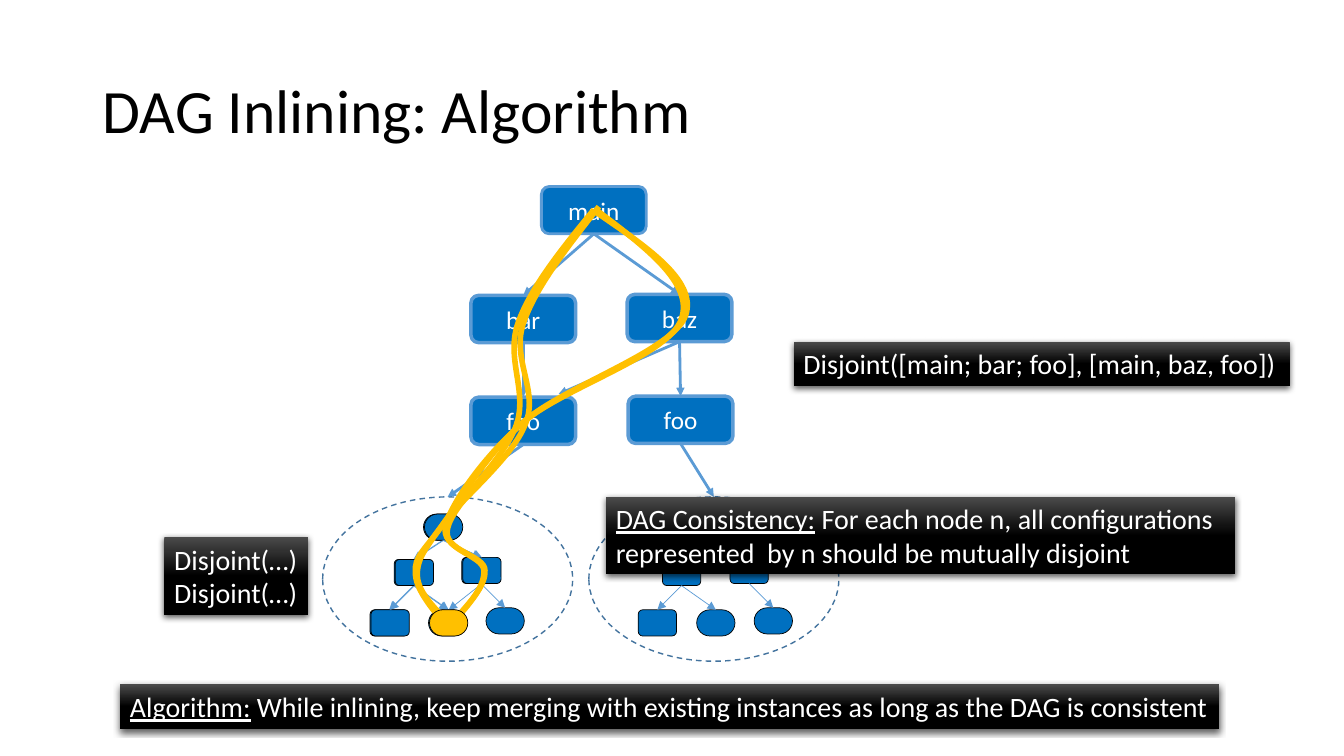
from lxml import etree
from pptx import Presentation
from pptx import util as u
from pptx.dml.color import RGBColor
from pptx.enum import dml, shapes, text
from pptx.oxml import ns

COLORS = {"blue": "0070C0", "edge": "5B9BD5", "region": "43739E", "gold": "FFC000",
          "black": "000000", "gray": "4B4B4B", "white": "FFFFFF"}
KINDS = shapes.MSO_SHAPE
TOP, BOTTOM = 0, 2  # connection sites of a call

CALLS = {  # label, left, top, outline width
    "main": ("main", 5.37, 1.85, 2),
    "bar": ("bar", 4.67, 2.93, 2.5),
    "baz": ("baz", 6.22, 2.92, 2.5),
    "shared foo": ("foo", 4.67, 3.94, 2.5),
    "other foo": ("foo", 6.23, 3.93, 2.5),
}
CALL_SIZE = (1.04, 0.47)
CALL_EDGES = [("main", "bar"), ("main", "baz"), ("bar", "shared foo"),
              ("baz", "other foo"), ("shared foo", "shared body"),
              ("other foo", "other body")]
BODIES = {"shared body": 3.2, "other body": 5.84}

BLOCK_SIZE = (0.38, 0.26)
BLOCKS = {  # offset within a body, rounded ends
    "left": (0.24, 0.45, False),
    "right": (0.91, 0.43, False),
    "root": (0.53, 0, True),
    "join": (0.58, 0.95, True),
    "left leaf": (0, 0.95, False),
    "right leaf": (1.15, 0.93, True),
}
BLOCK_EDGES = [("root", "left"), ("left", "left leaf"), ("left", "join"), ("root", "right")]
BLOCKS_TOP = 5.1
BODY_BLOCKS = [  # left, blocks left out, edge that differs
    (3.67, (), ("right", "right leaf")),
    (3.68, ("join", "right leaf"), ("right", "join")),
    (6.33, (), ("right", "right leaf")),
]

CONFIGURATIONS = [  # start, then two controls and an end for each curve
    [(5.94, 2.05), (5.63, 2.45), (5.31, 2.85), (5.19, 3.21), (5.07, 3.57), (5.35, 3.88),
     (5.21, 4.21), (5.08, 4.55), (4.55, 4.97), (4.38, 5.22), (4.2, 5.47), (4.13, 5.56),
     (4.14, 5.72), (4.15, 5.88), (4.31, 6.03), (4.46, 6.19)],
    [(5.89, 2.08), (5.58, 2.46), (5.27, 2.84), (5.14, 3.2), (5.01, 3.56), (5.24, 3.88),
     (5.12, 4.22), (5, 4.56), (4.49, 5), (4.44, 5.24), (4.38, 5.47), (4.81, 5.5),
     (4.81, 5.66), (4.82, 5.82), (4.64, 6), (4.47, 6.19)],
    [(5.89, 2.09), (6.4, 2.44), (6.92, 2.78), (6.8, 3.13), (6.68, 3.48), (5.6, 3.83),
     (5.2, 4.18), (4.8, 4.53), (4.56, 4.97), (4.38, 5.22), (4.2, 5.47), (4.11, 5.52),
     (4.12, 5.68), (4.12, 5.84), (4.27, 6.02), (4.41, 6.19)],
    [(5.91, 2.08), (6.4, 2.45), (6.88, 2.81), (6.76, 3.16), (6.65, 3.52), (5.58, 3.85),
     (5.19, 4.19), (4.8, 4.53), (4.49, 4.97), (4.42, 5.21), (4.36, 5.46), (4.79, 5.5),
     (4.8, 5.66), (4.81, 5.82), (4.65, 6), (4.48, 6.19)],
]


def add_xml(parent, tag, **attributes):
    return etree.SubElement(parent, ns.qn(tag), attributes)


class DagSlide:
    font = "Calibri"

    def __init__(self, deck):
        self.canvas = deck.slides.add_slide(deck.slide_layouts[5]).shapes

    def style(self, target, color, **values):
        target.color.rgb = RGBColor.from_string(COLORS[color])
        for name, value in values.items():
            setattr(target, name, value)

    def add_words(self, paragraph, words, color, size, **values):
        run = paragraph.add_run()
        run.text = words
        self.style(run.font, color, name=self.font, size=u.Pt(size), **values)

    def title(self, words):
        title = self.canvas.title
        box = {"left": 0.92, "top": 0.4, "width": 11.5, "height": 1.45}
        for side, length in box.items():
            setattr(title, side, u.Inches(length))
        title.text_frame.vertical_anchor = text.MSO_ANCHOR.MIDDLE
        title.text_frame.auto_size = text.MSO_AUTO_SIZE.NONE
        paragraph = title.text_frame.paragraphs[0]
        paragraph.alignment = text.PP_ALIGN.LEFT
        paragraph.line_spacing = 0.9
        self.add_words(paragraph, words, "black", 44)

    def node(self, kind, box, line, width, fill=None, label=None, canvas=None):
        node = (canvas or self.canvas).add_shape(kind, *map(u.Inches, box))
        node.shadow.inherit = False
        if fill:
            node.fill.solid()
            node.fill.fore_color.rgb = RGBColor.from_string(COLORS[fill])
        else:
            node.fill.background()
        self.style(node.line, line, width=u.Pt(width))
        if label:
            node.text_frame.vertical_anchor = text.MSO_ANCHOR.MIDDLE
            paragraph = node.text_frame.paragraphs[0]
            paragraph.alignment = text.PP_ALIGN.CENTER
            self.add_words(paragraph, label, "white", 18)
        return node

    def block(self, left, top, rounded, fill="blue", canvas=None):
        block = self.node(KINDS.ROUNDED_RECTANGLE, (left, top, *BLOCK_SIZE),
                          "black", 0.5, fill, canvas=canvas)
        if rounded:
            block.adjustments[0] = 0.5

    def arrow(self, start, end, width, canvas=None):
        arrow = (canvas or self.canvas).add_connector(
            shapes.MSO_CONNECTOR.STRAIGHT, *map(u.Inches, (*start, *end)))
        self.style(arrow.line, "edge", width=u.Pt(width))
        add_xml(arrow.line._get_or_add_ln(), "a:tailEnd", type="triangle")
        add_xml(arrow._element.spPr, "a:effectLst")
        return arrow

    def link(self, caller, callee):
        arrow = self.arrow((0, 0), (1, 1), 2)
        arrow.begin_connect(caller, BOTTOM)
        arrow.end_connect(callee, TOP)

    def body_blocks(self, left, omitted, last_edge):
        group = self.canvas.add_group_shape().shapes
        for name, (dx, dy, rounded) in BLOCKS.items():
            if name not in omitted:
                self.block(left + dx, BLOCKS_TOP + dy, rounded, canvas=group)
        width, height = BLOCK_SIZE
        for tail, head in [*BLOCK_EDGES, last_edge]:
            (x1, y1, _), (x2, y2, _) = BLOCKS[tail], BLOCKS[head]
            self.arrow((left + x1 + width / 2, BLOCKS_TOP + y1 + height),
                       (left + x2 + width / 2, BLOCKS_TOP + y2), 0.5, group)

    def configuration(self, points):
        """Draw a smooth call route through Bézier points."""
        start, *rest = [tuple(map(u.Inches, point)) for point in points]
        builder = self.canvas.build_freeform(*start)
        builder.add_line_segments(rest, close=False)
        route = builder.convert_to_shape()
        route.shadow.inherit = False
        route.fill.background()
        self.style(route.line, "gold", width=u.Pt(4))
        lines = list(route._element.iter(ns.qn("a:lnTo")))
        for segments in zip(lines[::3], lines[1::3], lines[2::3]):
            curve = etree.Element(ns.qn("a:cubicBezTo"))
            segments[0].addprevious(curve)
            for segment in segments:
                curve.append(segment[0])
                segment.getparent().remove(segment)

    def callout(self, box, *lines, heading=None):
        callout = self.canvas.add_textbox(*map(u.Inches, box))
        callout.fill.gradient()
        callout.fill.gradient_angle = 270
        for stop, color, position in zip(callout.fill.gradient_stops, ("gray", "black"), (0, 0.5)):
            self.style(stop, color, position=position)
        effects = add_xml(callout._element.spPr, "a:effectLst")
        shadow = add_xml(effects, "a:outerShdw", blurRad=str(int(u.Pt(4.5))),
                         dist=str(int(u.Pt(1.5))), dir="5400000", algn="ctr", rotWithShape="0")
        shade = add_xml(shadow, "a:srgbClr", val=COLORS["black"])
        add_xml(shade, "a:alpha", val="63000")
        frame = callout.text_frame
        frame.word_wrap = False
        frame.auto_size = text.MSO_AUTO_SIZE.SHAPE_TO_FIT_TEXT
        if heading:
            self.add_words(frame.paragraphs[0], heading, "white", 20, underline=True)
        for number, line in enumerate(lines):
            paragraph = frame.add_paragraph() if number else frame.paragraphs[0]
            self.add_words(paragraph, line, "white", 20)


def main():
    deck = Presentation()
    deck.slide_width, deck.slide_height = u.Inches(13.33), u.Inches(7.5)
    dag = DagSlide(deck)
    dag.title("DAG Inlining: Algorithm")

    nodes = {name: dag.node(KINDS.ROUNDED_RECTANGLE, (left, top, *CALL_SIZE), "edge", width,
                            "blue", label)
             for name, (label, left, top, width) in CALLS.items()}
    for name, left in BODIES.items():
        nodes[name] = dag.node(KINDS.OVAL, (left, 4.93, 2.48, 1.63), "region", 1)
        nodes[name].line.dash_style = dml.MSO_LINE.DASH
    for caller, callee in CALL_EDGES:
        dag.link(nodes[caller], nodes[callee])
    dag.arrow((6.74, 3.39), (5.54, 3.91), 2)

    dag.callout((7.87, 3.39, 4.92, 0.44), "Disjoint([main; bar; foo], [main, baz, foo])")
    for body in BODY_BLOCKS:
        dag.body_blocks(*body)
    dag.callout((1.63, 5.33, 1.43, 0.77), "Disjoint(…)", "Disjoint(…)")
    dag.callout((6.01, 4.93, 6.24, 0.77), " For each node n, all configurations",
                "represented  by n should be mutually disjoint", heading="DAG Consistency:")
    for points in CONFIGURATIONS:
        dag.configuration(points)
    dag.block(4.26, 6.05, True, "gold")
    dag.callout((1.19, 6.79, 10.9, 0.44),
                " While inlining, keep merging with existing instances as long as the DAG is consistent",
                heading="Algorithm:")
    deck.save("out.pptx")


if __name__ == "__main__":
    main()
